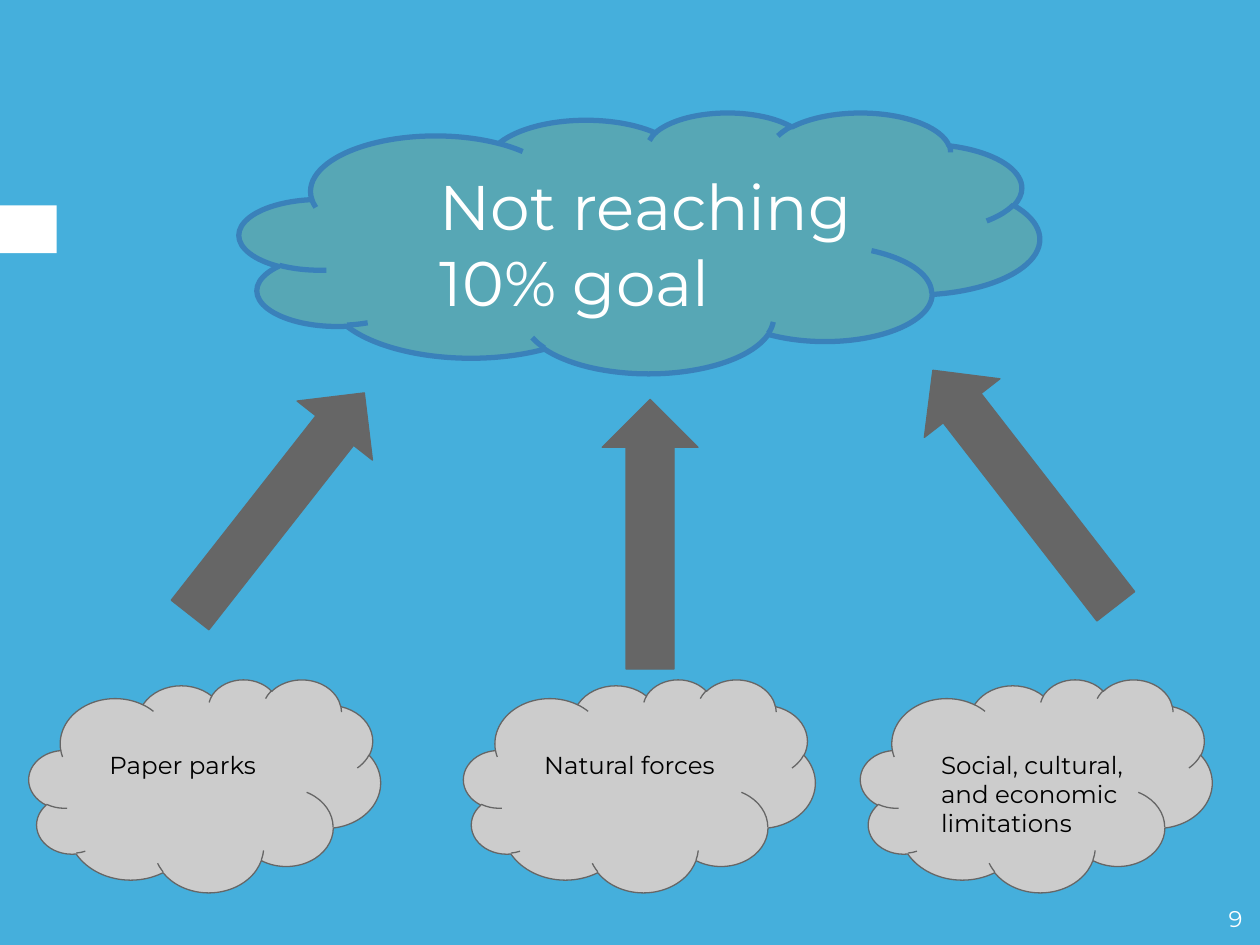
from pptx import Presentation
from pptx.dml.color import RGBColor
from pptx.enum import shapes, text
from pptx.util import Inches, Pt

COLORS = {
    "sky": "45AFDC",
    "white": "FFFFFF",
    "black": "000000",
    "goal": "57A7B5",
    "goal_edge": "3A81BA",
    "cause": "CCCCCC",
    "gray": "666666",
}
FONT = "Montserrat"


def color(name):
    return RGBColor.from_string(COLORS[name])


def write(frame, words, size=14, ink="black", align=text.PP_ALIGN.LEFT):
    frame.word_wrap = True
    frame.auto_size = text.MSO_AUTO_SIZE.NONE
    frame.vertical_anchor = text.MSO_ANCHOR.TOP
    frame.margin_left = frame.margin_right = Inches(0.1)
    frame.margin_top = frame.margin_bottom = Inches(0.1)
    paragraph = frame.paragraphs[0]
    paragraph.alignment = align
    run = paragraph.add_run()
    run.text = words
    run.font.name = FONT
    run.font.size = Pt(size)
    run.font.color.rgb = color(ink)


class Canvas:
    """Holds the current slide and draws its elements, with boxes in inches."""

    def __init__(self, slide, background):
        self.slide = slide
        slide.background.fill.solid()
        slide.background.fill.fore_color.rgb = color(background)

    def shape(self, preset, box, fill, edge=None, width=0.75, rotation=0):
        drawn = self.slide.shapes.add_shape(preset, *map(Inches, box))
        drawn.shadow.inherit = False
        drawn.rotation = rotation
        drawn.fill.solid()
        drawn.fill.fore_color.rgb = color(fill)
        if edge:
            drawn.line.color.rgb = color(edge)
            drawn.line.width = Pt(width)
        else:
            drawn.line.fill.background()

    def cloud(self, box, fill, edge, width=0.75):
        self.shape(shapes.MSO_SHAPE.CLOUD, box, fill, edge, width)

    def arrow(self, box, rotation=0):
        self.shape(shapes.MSO_SHAPE.UP_ARROW, box, "gray", "gray", rotation=rotation)

    def label(self, box, words, **style):
        write(self.slide.shapes.add_textbox(*map(Inches, box)).text_frame, words, **style)

    def title(self, box, words, **style):
        """Place the title in front of everything drawn so far."""
        heading = self.slide.shapes.title
        heading.left, heading.top, heading.width, heading.height = map(Inches, box)
        write(heading.text_frame, words, **style)
        self.slide.shapes._spTree.append(heading._element)


def main():
    deck = Presentation()
    deck.slide_width, deck.slide_height = Inches(10), Inches(7.5)
    canvas = Canvas(deck.slides.add_slide(deck.slide_layouts[5]), "sky")

    canvas.shape(shapes.MSO_SHAPE.RECTANGLE, (0, 1.63, 0.45, 0.38), "white")
    canvas.label((9.36, 7.08, 0.6, 0.42), "9", size=13, ink="white",
                 align=text.PP_ALIGN.RIGHT)

    canvas.cloud((1.9, 0.89, 6.35, 2.07), "goal", "goal_edge", width=3)
    canvas.title((3.39, 1.23, 3.84, 0.76), "Not reaching 10% goal", size=36, ink="white")

    # Each cause: cloud left, words, arrow (left, top, height, rotation)
    causes = [
        (0.23, "Paper parks", (1.82, 2.88, 2.24, 38.1)),
        (3.68, "Natural forces", (4.78, 3.17, 2.14, 0)),
        (6.83, "Social, cultural, and economic limitations", (7.75, 2.69, 2.37, 322.2)),
    ]
    for left, words, (arrow_left, arrow_top, length, rotation) in causes:
        canvas.cloud((left, 5.39, 2.79, 1.69), "cause", "gray")
        canvas.arrow((arrow_left, arrow_top, 0.76, length), rotation)
        canvas.label((left + 0.54, 5.85, 1.71, 0.76), words)

    deck.save("out.pptx")


if __name__ == "__main__":
    main()
